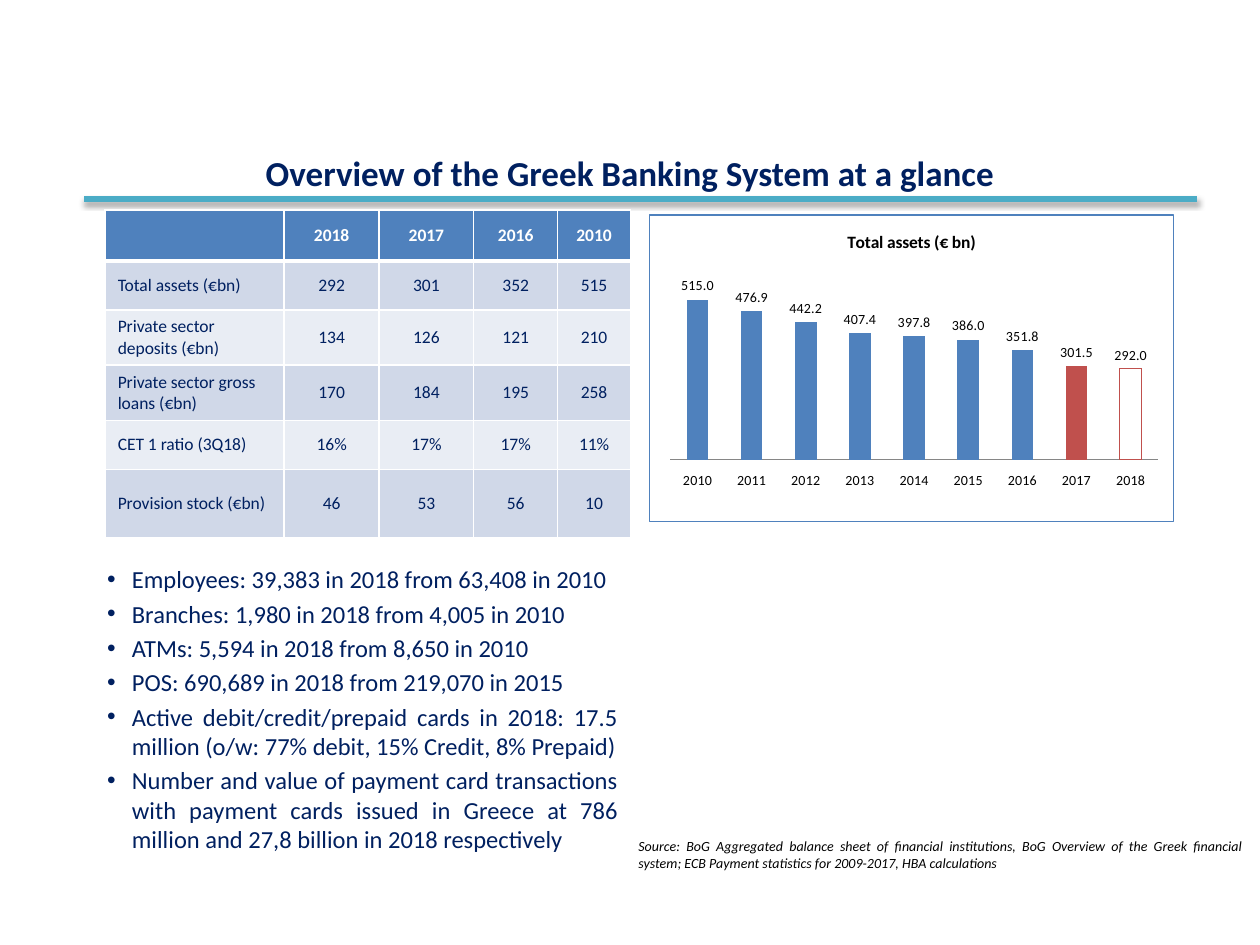
from lxml import etree
from pptx import Presentation
from pptx.chart.data import CategoryChartData
from pptx.dml.color import RGBColor
from pptx.enum.chart import XL_CHART_TYPE, XL_LABEL_POSITION, XL_TICK_LABEL_POSITION, XL_TICK_MARK
from pptx.enum.shapes import MSO_CONNECTOR
from pptx.enum.text import MSO_ANCHOR, PP_ALIGN
from pptx.oxml import parse_xml
from pptx.oxml.ns import nsdecls, qn
from pptx.util import Cm, Pt

CENTER, LEFT, JUSTIFY = PP_ALIGN.CENTER, PP_ALIGN.LEFT, PP_ALIGN.JUSTIFY
MIDDLE, TOP = MSO_ANCHOR.MIDDLE, MSO_ANCHOR.TOP
COLUMNS = XL_CHART_TYPE.COLUMN_CLUSTERED
OUTSIDE_END = XL_LABEL_POSITION.OUTSIDE_END
LABELS_LOW = XL_TICK_LABEL_POSITION.LOW
NO_TICK = XL_TICK_MARK.NONE
STRAIGHT = MSO_CONNECTOR.STRAIGHT

FONT = "Calibri"
NAVY, BLUE, RED, TEAL = "002060", "4F81BD", "C0504D", "4BACC6"
WHITE, BLACK, GRAY = "FFFFFF", "000000", "868686"
BANDS = ("D0D8E8", "E9EDF4")

INDICATORS = [
    ("", "2018", "2017", "2016", "2010"),
    ("Total assets (€bn)", "292", "301", "352", "515"),
    ("Private sector deposits (€bn)", "134", "126", "121", "210"),
    ("Private sector gross loans (€bn)", "170", "184", "195", "258"),
    ("CET 1 ratio (3Q18)", "16%", "17%", "17%", "11%"),
    ("Provision stock (€bn)", "46", "53", "56", "10"),
]
COLUMN_WIDTHS = (3.61, 1.91, 1.91, 1.69, 1.47)
ROW_HEIGHTS = (0.99,) * 5 + (1.37,)
TOTAL_ASSETS = (515, 476.9, 442.2, 407.4, 397.8, 386, 351.8, 301.5, 292)
FACTS = [
    "Employees: 39,383 in 2018 from 63,408 in 2010",
    "Branches: 1,980 in 2018 from 4,005 in 2010",
    "ATMs: 5,594 in 2018 from 8,650 in 2010",
    "POS: 690,689 in 2018 from 219,070 in 2015",
    "Active debit/credit/prepaid cards in 2018: 17.5 million "
    "(o/w: 77% debit, 15% Credit, 8% Prepaid)",
    "Number and value of payment card transactions with payment cards issued "
    "in Greece at 786 million and 27,8 billion in 2018 respectively",
]
SOURCE = ("Source: BoG Aggregated balance sheet of financial institutions, "
          "BoG Overview of the Greek financial system; "
          "ECB Payment statistics for 2009-2017, HBA calculations")


def rgb(hex_color):
    return RGBColor.from_string(hex_color)


def style_font(font, size, color, bold=False, italic=False):
    font.name, font.size, font.bold, font.italic = FONT, Pt(size), bold, italic
    font.color.rgb = rgb(color)


def write(frame, lines, size, color=NAVY, align=LEFT, anchor=TOP,
          bold=False, italic=False, bullet=False, gap=0):
    frame.word_wrap = True
    frame.vertical_anchor = anchor
    for index, line in enumerate(lines):
        paragraph = frame.paragraphs[0] if index == 0 else frame.add_paragraph()
        paragraph.alignment = align
        if index and gap:
            paragraph.space_before = Pt(gap)
        if bullet:
            add_bullet(paragraph, color)
        run = paragraph.add_run()
        run.text = line
        style_font(run.font, size, color, bold, italic)


def add_bullet(paragraph, color, indent=0.5):
    properties = paragraph._p.get_or_add_pPr()
    properties.set("marL", str(Cm(indent)))
    properties.set("indent", str(-Cm(indent)))
    properties.append(parse_xml(
        f'<a:buClr {nsdecls("a")}><a:srgbClr val="{color}"/></a:buClr>'))
    properties.append(parse_xml(f'<a:buFont {nsdecls("a")} typeface="Arial"/>'))
    properties.append(parse_xml(f'<a:buChar {nsdecls("a")} char="•"/>'))


def add_heading(slide, left, top, width, height):
    title = slide.shapes.title
    title.left, title.top, title.width, title.height = map(Cm, (left, top, width, height))
    write(title.text_frame, ["Overview of the Greek Banking System at a glance"],
          20, align=CENTER, anchor=MIDDLE, bold=True)


def add_title_rule(slide, left, top, width):
    rule = slide.shapes.add_connector(
        STRAIGHT, Cm(left), Cm(top), Cm(left + width), Cm(top))
    rule.line.color.rgb = rgb(TEAL)
    rule.line.width = Pt(3)
    rule._element.spPr.append(parse_xml(
        f'<a:effectLst {nsdecls("a")}>'
        f'<a:outerShdw blurRad="{Pt(3.1)}" dist="{Pt(1.8)}" dir="5400000" rotWithShape="0">'
        f'<a:srgbClr val="{BLACK}"><a:alpha val="35000"/></a:srgbClr>'
        '</a:outerShdw></a:effectLst>'))


def set_borders(cell, bottom_width):
    properties = cell._tc.get_or_add_tcPr()
    widths = {"lnL": 1, "lnR": 1, "lnT": 1, "lnB": bottom_width}
    for position, (side, width) in enumerate(widths.items()):
        properties.insert(position, parse_xml(
            f'<a:{side} {nsdecls("a")} w="{Pt(width)}"><a:solidFill>'
            f'<a:srgbClr val="{WHITE}"/></a:solidFill></a:{side}>'))


def add_indicator_table(slide, left, top):
    table = slide.shapes.add_table(
        len(INDICATORS), len(COLUMN_WIDTHS), Cm(left), Cm(top),
        Cm(sum(COLUMN_WIDTHS)), Cm(sum(ROW_HEIGHTS))).table
    for column, width in zip(table.columns, COLUMN_WIDTHS):
        column.width = Cm(width)
    for row, height in zip(table.rows, ROW_HEIGHTS):
        row.height = Cm(height)
    for r, values in enumerate(INDICATORS):
        header = r == 0
        for c, value in enumerate(values):
            cell = table.cell(r, c)
            set_borders(cell, 3 if header else 1)
            cell.fill.solid()
            cell.fill.fore_color.rgb = rgb(BLUE if header else BANDS[(r - 1) % 2])
            cell.vertical_anchor = MIDDLE
            if value:
                write(cell.text_frame, [value], 10, WHITE if header else NAVY,
                      align=CENTER if c else LEFT, anchor=MIDDLE, bold=header)


def frame_chart(chart, plot_box):
    """Outline the chart area and fix the inner plot box, in fractions of the chart."""
    chart_part = chart._chartSpace.find(qn("c:chart"))
    chart_part.addnext(parse_xml(
        f'<c:spPr {nsdecls("c", "a")}><a:solidFill><a:srgbClr val="{WHITE}"/></a:solidFill>'
        f'<a:ln w="{Pt(0.75)}"><a:solidFill><a:srgbClr val="{BLUE}"/></a:solidFill></a:ln>'
        '</c:spPr>'))
    plot_area = chart_part.find(qn("c:plotArea"))
    for old_layout in plot_area.findall(qn("c:layout")):
        plot_area.remove(old_layout)
    layout = etree.Element(qn("c:layout"))
    manual = etree.SubElement(layout, qn("c:manualLayout"))
    settings = [("layoutTarget", "inner"), ("xMode", "edge"), ("yMode", "edge")]
    for tag, value in settings + list(zip("xywh", plot_box)):
        etree.SubElement(manual, qn(f"c:{tag}")).set("val", str(value))
    plot_area.insert(0, layout)


def add_assets_chart(slide, left, top, width, height):
    data = CategoryChartData(number_format="0.0")
    data.categories = [str(year) for year in range(2010, 2019)]
    data.add_series("Series 1", TOTAL_ASSETS)
    chart = slide.shapes.add_chart(
        COLUMNS, Cm(left), Cm(top), Cm(width), Cm(height), data).chart
    style_font(chart.font, 18, BLACK)
    chart.has_legend = False
    chart.has_title = True
    write(chart.chart_title.text_frame, ["Total assets (€ bn)"], 10, BLACK,
          align=CENTER, bold=True)

    years, amounts = chart.category_axis, chart.value_axis
    years.major_tick_mark = years.minor_tick_mark = NO_TICK
    years.tick_label_position = LABELS_LOW
    years.format.line.color.rgb = rgb(GRAY)
    style_font(years.tick_labels.font, 8, BLACK)
    amounts.minimum_scale, amounts.maximum_scale = 0, 600
    amounts.has_major_gridlines = False
    amounts.visible = False

    plot = chart.plots[0]
    plot.gap_width = 150
    plot.vary_by_categories = False
    assets = plot.series[0]
    assets.format.fill.solid()
    assets.format.fill.fore_color.rgb = rgb(BLUE)
    bar_2017, bar_2018 = (assets.points[i].format for i in (7, 8))
    bar_2017.fill.solid()
    bar_2017.fill.fore_color.rgb = rgb(RED)
    bar_2018.fill.background()
    bar_2018.line.color.rgb = rgb(RED)

    labels = assets.data_labels
    labels.show_value = True
    labels.number_format, labels.number_format_is_linked = "#,##0.0", False
    labels.position = OUTSIDE_END
    style_font(labels.font, 8, BLACK)
    frame_chart(chart, (0.04, 0.19, 0.93, 0.61))


def add_text(slide, left, top, width, height, lines, **text_format):
    box = slide.shapes.add_textbox(Cm(left), Cm(top), Cm(width), Cm(height))
    write(box.text_frame, lines, **text_format)


def main():
    deck = Presentation()
    deck.slide_width, deck.slide_height = Cm(25.4), Cm(19.05)
    slide = deck.slides.add_slide(deck.slide_layouts[5])
    add_heading(slide, 1.27, 2.74, 22.86, 1.47)
    add_title_rule(slide, 1.7, 4.01, 22.43)
    add_indicator_table(slide, 2.12, 4.23)
    add_assets_chart(slide, 13.08, 4.32, 10.59, 6.2)
    add_text(slide, 1.91, 11.25, 10.8, 6.3, FACTS, size=14, align=JUSTIFY,
             bullet=True, gap=2.8)
    add_text(slide, 12.62, 16.76, 12.7, 0.94, [SOURCE], size=8, color=BLACK,
             align=JUSTIFY, italic=True)
    deck.save("out.pptx")


if __name__ == "__main__":
    main()
